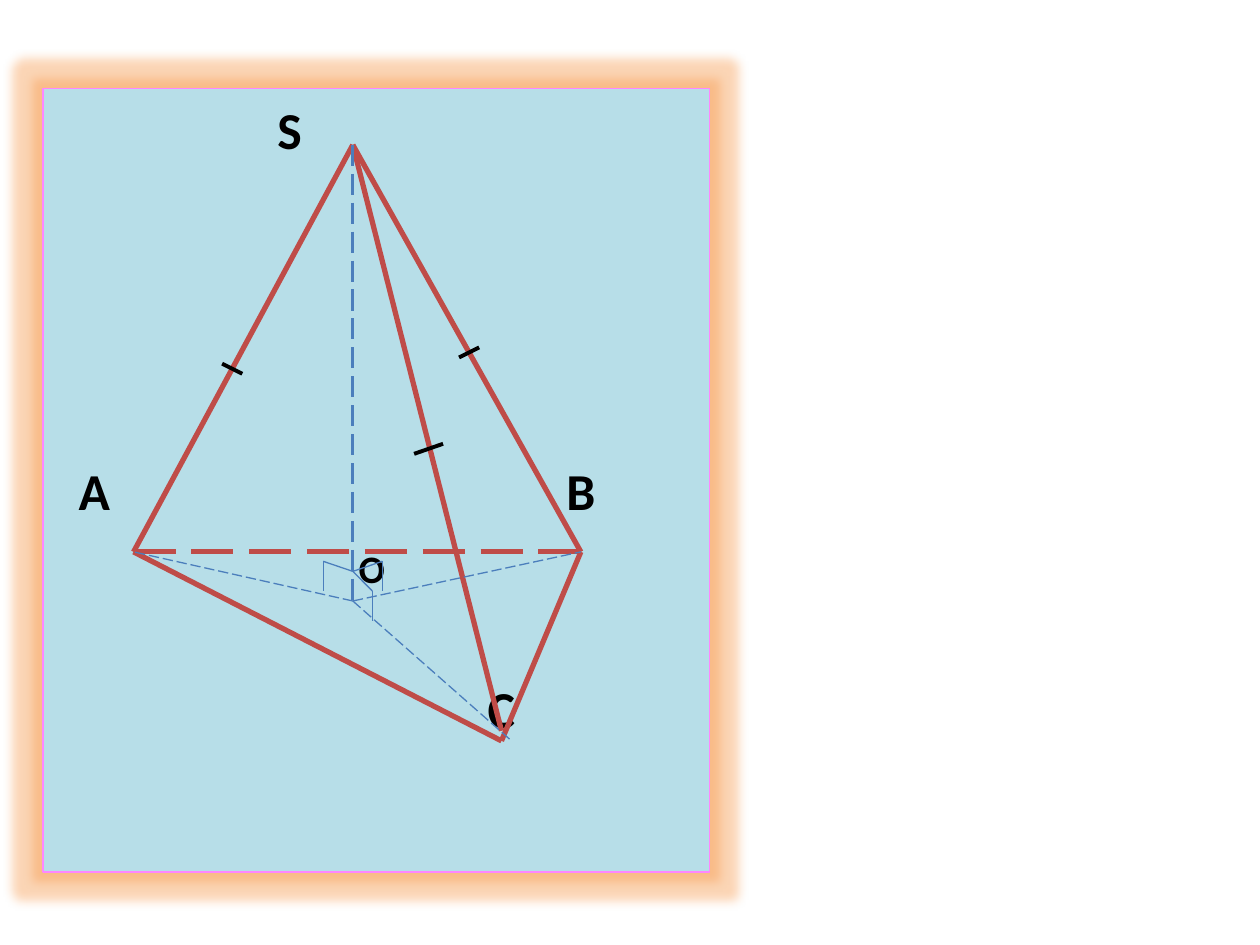
from lxml.etree import SubElement as Sub
from pptx import Presentation
from pptx.dml.color import RGBColor as Rgb
from pptx.enum.dml import MSO_LINE as Dash
from pptx.enum.shapes import MSO_CONNECTOR as Link, MSO_SHAPE as Kind
from pptx.enum.text import MSO_ANCHOR as Anchor, PP_ALIGN as Align
from pptx.oxml.ns import qn
from pptx.util import Inches, Pt

HUES = {"pane": "B7DEE8", "rim": "FD87FF", "glow": "F79646",
        "edge": "BF4C48", "thin": "4B7EBC", "ink": "000000"}
WIDE, HIGH = Inches(10), Inches(7.5)
CELL = WIDE / 100
PANE = (3.4, 7, 52.9, 62.2)
SPOTS = {"S": (24.6, 4.5), "A": (7.2, 36.8), "B": (42.7, 36.8), "C": (36.4, 51.8),
         "O": (24.6, 40.7), "C top": (36.4, 51), "C side": (37.2, 51.8)}
NAMES = {"S": (19.6, 3.2, 29.6), "A": (4.1, 31.9, 29.6), "B": (42.7, 31.9, 29.6),
         "O": (26.1, 38.1, 22.2), "C": (36.4, 49.2, 29.6)}


def size(num):
    """Turn a count of grid cells into a slide length."""
    return round(num * CELL)


def write(slide, text, box, font="Calibri", pts=29.6, hue="ink", bold=True):
    """Put centred text in a box given in cells."""
    frame = slide.shapes.add_textbox(*map(size, box)).text_frame
    frame.margin_left = frame.margin_right = frame.margin_top = frame.margin_bottom = 0
    frame.word_wrap = True
    frame.vertical_anchor = Anchor.MIDDLE
    par = frame.paragraphs[0]
    par.alignment = Align.CENTER
    run = par.add_run()
    run.text = text
    run.font.name, run.font.size, run.font.bold = font, Pt(pts), bold
    run.font.color.rgb = Rgb.from_string(HUES[hue])


def draw(slide, box, start, end, hue="thin", pts=0.75, dash=None):
    """Draw a line between two points of the box."""
    left, top = box[:2]
    ends = [size(num) for x, y in (start, end) for num in (left + x, top + y)]
    line = slide.shapes.add_connector(Link.STRAIGHT, *ends)
    line.line.color.rgb = Rgb.from_string(HUES[hue])
    line.line.width = Pt(pts)
    if dash:
        line.line.dash_style = dash
    Sub(line.element.spPr, qn("a:effectLst"))


def panel(slide, box):
    """Lay the glowing panel."""
    pane = slide.shapes.add_shape(Kind.RECTANGLE, *map(size, box))
    pane.fill.solid()
    pane.fill.fore_color.rgb = Rgb.from_string(HUES["pane"])
    pane.line.color.rgb = Rgb.from_string(HUES["rim"])
    pane.line.width = Pt(0.75)
    pane.shadow.inherit = False
    glow = Sub(pane.element.spPr.find(qn("a:effectLst")), qn("a:glow"), rad=str(Pt(11)))
    tint = Sub(glow, qn("a:srgbClr"), val=HUES["glow"])
    Sub(tint, qn("a:alpha"), val="40000")


def names(slide, box):
    """Name the corners and the foot of the height."""
    for name, (x, y, pts) in NAMES.items():
        write(slide, name, (box[0] + x - 3, box[1] + y - 3, 6, 6), pts=pts)


def solid(slide, box):
    """Draw the edges, the height and the lines from its foot."""
    for start, end, dash in (("A", "B", Dash.LONG_DASH), ("A", "C", None), ("B", "C", None),
                             ("S", "A", None), ("S", "C top", None), ("S", "B", None)):
        draw(slide, box, SPOTS[start], SPOTS[end], "edge", 3, dash)
    for start, end, pts in (("S", "O", 1.5), ("O", "B", 0.75),
                            ("O", "C side", 0.75), ("O", "A", 0.75)):
        draw(slide, box, SPOTS[start], SPOTS[end], pts=pts, dash=Dash.LONG_DASH)


def ticks(slide, box):
    """Mark the three equal edges from the apex."""
    top = SPOTS["S"]
    for end, part, dx, dy in (("A", 0.55, 0.8, 0.4), ("C", 0.51, 1.15, -0.4),
                              ("B", 0.51, 0.8, -0.4)):
        x, y = (a + (b - a) * part for a, b in zip(top, SPOTS[end]))
        draw(slide, box, (x - dx, y - dy), (x + dx, y + dy), "ink", 2.25)


def angles(slide, box):
    """Mark the right angles at the foot of the height."""
    rise = 2.35
    x, y = SPOTS["O"][0], SPOTS["O"][1] - rise
    for dx, dy in ((-2.35, -0.8), (2.35, -0.8), (1.55, 1.55)):
        tip = (x + dx, y + dy)
        draw(slide, box, (x, y), tip)
        draw(slide, box, tip, (tip[0], tip[1] + rise))


def main():
    """Build and save the slide."""
    deck = Presentation()
    deck.slide_width, deck.slide_height = WIDE, HIGH
    slide = deck.slides.add_slide(deck.slide_layouts[6])
    for part in (panel, names, solid, ticks, angles):
        part(slide, PANE)
    deck.save("out.pptx")


if __name__ == "__main__":
    main()
